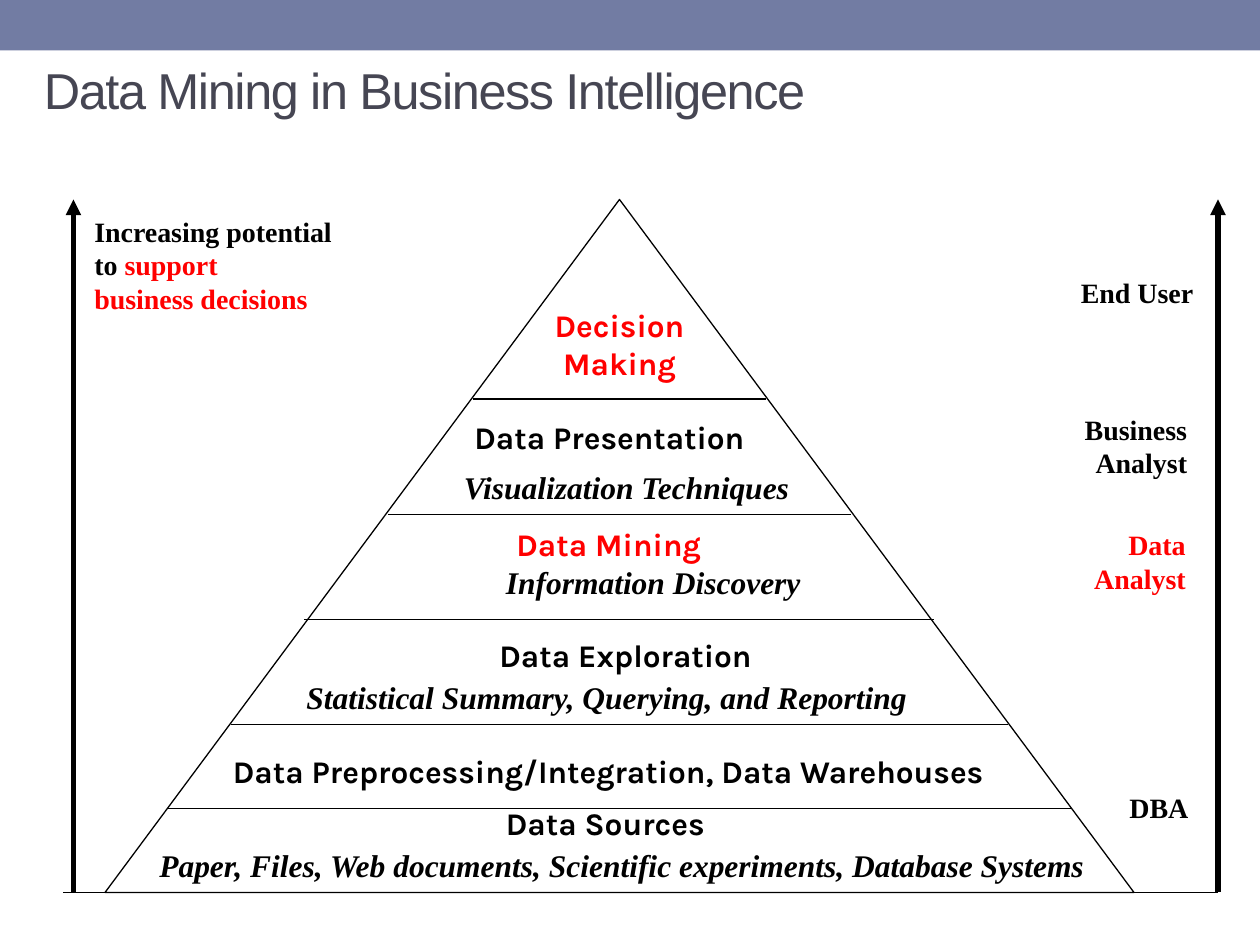
from lxml import etree
from pptx import Presentation
from pptx.dml.color import RGBColor
from pptx.enum.shapes import MSO_CONNECTOR, MSO_SHAPE
from pptx.enum.text import MSO_ANCHOR, PP_ALIGN
from pptx.oxml.ns import qn
from pptx.util import Pt

LEFT, CENTER, RIGHT = PP_ALIGN.LEFT, PP_ALIGN.CENTER, PP_ALIGN.RIGHT
STRAIGHT = MSO_CONNECTOR.STRAIGHT
MIDDLE, TOP = MSO_ANCHOR.MIDDLE, MSO_ANCHOR.TOP
BLACK, RED, BAND, SLATE = "000000", "FF0000", "727CA3", "464653"

APEX_Y, BASE_Y = 114, 510
PYRAMID = (60, APEX_Y, 588, BASE_Y - APEX_Y)
LEVEL_LINES = [
    (96, 612, 462), (132, 576, 414), (174, 534, 354),
    (222, 486, 294), (270, 438, 228), (36, 696, BASE_Y),
]
ARROW_XS = [42, 696]

STYLES = {
    "title": {"name": "Arial", "size": Pt(28.8)},
    "side": {"name": "Times New Roman", "size": Pt(16), "bold": True},
    "level": {"name": "Karla", "size": Pt(18), "bold": True},
    "detail": {"name": "Times New Roman", "size": Pt(18), "bold": True, "italic": True},
}

TITLE = ((18, 30.2, 684, 41.8), [[("Data Mining in Business Intelligence", SLATE)]])

SIDE_LABELS = [
    ((46.8, 118.8, 151.2, 64.8), LEFT, [
        [("Increasing potential", BLACK)],
        [("to ", BLACK), ("support", RED)],
        [("business decisions", RED)],
    ]),
    ((610, 154, 79, 26.6), RIGHT, [[("End User", BLACK)]]),
    ((610.6, 232, 74.9, 46), RIGHT, [[("Business", BLACK)], [("Analyst", BLACK)]]),
    ((617, 298, 67.7, 46), RIGHT, [[("Data", RED)], [("Analyst", RED)]]),
    ((638, 448, 48.2, 26.6), RIGHT, [[("DBA", BLACK)]]),
]

LEVEL_LABELS = [
    ("level", (306, 171.4, 96, 50.4), CENTER, True, "Decision Making", RED),
    ("level", (264, 235.4, 178, 28.8), LEFT, False, "Data Presentation", BLACK),
    ("detail", (258, 264, 203, 28.8), LEFT, False, "Visualization Techniques", BLACK),
    ("level", (288, 296.6, 140.4, 28.8), LEFT, True, "Data Mining", RED),
    ("detail", (282, 318, 183, 28.8), LEFT, False, "Information Discovery", BLACK),
    ("level", (265, 360, 185, 28.8), CENTER, True, "Data Exploration", BLACK),
    ("detail", (168, 384, 360, 28.8), LEFT, True,
     "Statistical Summary, Querying, and Reporting", BLACK),
    ("level", (126, 426, 474.5, 28.8), LEFT, False,
     "Data Preprocessing/Integration, Data Warehouses", BLACK),
    ("level", (282, 456, 134, 28.8), LEFT, False, "Data Sources", BLACK),
    ("detail", (84, 480, 560, 28.8), LEFT, True,
     "Paper, Files, Web documents, Scientific experiments, Database Systems", BLACK),
]


def color(value):
    return RGBColor.from_string(value)


def points(values):
    return [Pt(value) for value in values]


def add_text(page, frame, lines, style, align=LEFT, wrap=False, anchor=TOP, spacing=None):
    box = page.shapes.add_textbox(*points(frame))
    text = box.text_frame
    text.word_wrap = wrap
    text.vertical_anchor = anchor
    for index, line in enumerate(lines):
        para = text.paragraphs[0] if index == 0 else text.add_paragraph()
        para.alignment = align
        for words, ink in line:
            span = para.add_run()
            span.text = words
            span.font.color.rgb = color(ink)
            for key, value in STYLES[style].items():
                setattr(span.font, key, value)
            if spacing is not None:
                span.font._element.set("spc", str(spacing))


def add_line(page, start, end, width, arrow=False):
    line = page.shapes.add_connector(STRAIGHT, *points(start + end))
    line.line.color.rgb = color(BLACK)
    line.line.width = Pt(width)
    if arrow:
        etree.SubElement(line.line._get_or_add_ln(), qn("a:tailEnd"), type="triangle")
    etree.SubElement(line._element.spPr, qn("a:effectLst"))


def add_figure(page, kind, frame, fill=None, line=None):
    figure = page.shapes.add_shape(kind, *points(frame))
    figure.shadow.inherit = False
    if fill:
        figure.fill.solid()
        figure.fill.fore_color.rgb = color(fill)
    else:
        figure.fill.background()
    if line:
        figure.line.color.rgb = color(line)
        figure.line.width = Pt(0.75)
    else:
        figure.line.fill.background()


def main():
    deck = Presentation()
    deck.slide_width, deck.slide_height = Pt(720), Pt(540)
    page = deck.slides.add_slide(deck.slide_layouts[6])

    add_figure(page, MSO_SHAPE.RECTANGLE, (0, 0, 720, 28.8), fill=BAND)
    add_text(page, *TITLE, "title", wrap=True, anchor=MIDDLE, spacing=-80)
    add_figure(page, MSO_SHAPE.FLOWCHART_EXTRACT, PYRAMID, line=BLACK)

    for left, right, y in LEVEL_LINES:
        add_line(page, (left, y), (right, y), 0.75)
    for x in ARROW_XS:
        add_line(page, (x, BASE_Y), (x, APEX_Y), 3, arrow=True)

    for frame, align, lines in SIDE_LABELS:
        add_text(page, frame, lines, "side", align)
    for style, frame, align, wrap, words, ink in LEVEL_LABELS:
        add_text(page, frame, [[(words, ink)]], style, align, wrap)

    deck.save("out.pptx")


if __name__ == "__main__":
    main()
